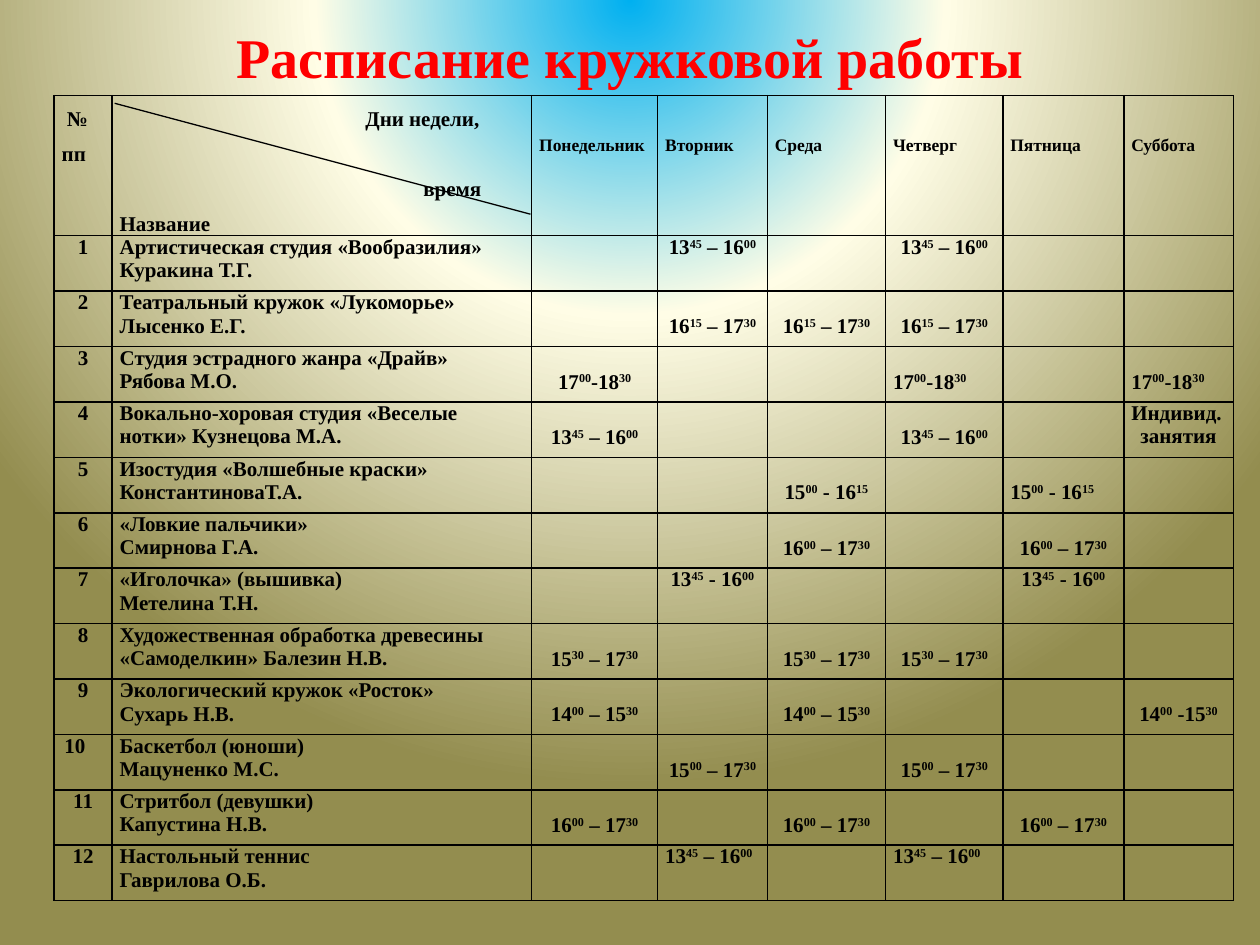
from lxml.etree import SubElement
from pptx import Presentation
from pptx.dml.color import RGBColor
from pptx.enum.shapes import MSO_CONNECTOR
from pptx.enum.text import MSO_ANCHOR, MSO_AUTO_SIZE, PP_ALIGN
from pptx.oxml import parse_xml
from pptx.oxml.ns import nsdecls, qn
from pptx.util import Inches, Pt

FONT = "Times New Roman"
BLACK = RGBColor(0, 0, 0)
RED = RGBColor(255, 0, 0)
SKY = RGBColor(0x00, 0xB0, 0xF0)
CREAM = RGBColor(0xFF, 0xFD, 0xE6)
OLIVE = RGBColor(0x93, 0x8D, 0x4F)
STOPS = [(0, SKY), (40, CREAM), (100, OLIVE)]
LEFT, MID = PP_ALIGN.LEFT, PP_ALIGN.CENTER

TITLE = "Расписание кружковой работы"
DAYS = ["Понедельник", "Вторник", "Среда", "Четверг", "Пятница", "Суббота"]
MON, TUE, WED, THU, FRI, SAT = range(2, 8)
# club, teacher, then time for each day; ^ raises the two digits after it
CLUBS = [
    ("Артистическая студия «Вообразилия»", "Куракина Т.Г.",
     {TUE: "13^45 – 16^00", THU: "13^45 – 16^00"}),
    ("Театральный кружок «Лукоморье»", "Лысенко Е.Г.",
     {TUE: "16^15 – 17^30", WED: "16^15 – 17^30", THU: "16^15 – 17^30"}),
    ("Студия эстрадного жанра «Драйв»", "Рябова М.О.",
     {MON: "17^00-18^30", THU: "17^00-18^30", SAT: "17^00-18^30"}),
    ("Вокально-хоровая студия «Веселые", "нотки» Кузнецова М.А.",
     {MON: "13^45 – 16^00", THU: "13^45 – 16^00", SAT: "Индивид.\nзанятия"}),
    ("Изостудия «Волшебные краски»", "КонстантиноваТ.А.",
     {WED: "15^00 - 16^15", FRI: "15^00 - 16^15"}),
    ("«Ловкие пальчики»", "Смирнова Г.А.",
     {WED: "16^00 – 17^30", FRI: "16^00 – 17^30"}),
    ("«Иголочка» (вышивка)", "Метелина Т.Н.",
     {TUE: "13^45 - 16^00", FRI: "13^45 - 16^00"}),
    ("Художественная обработка древесины", "«Самоделкин» Балезин Н.В.",
     {MON: "15^30 – 17^30", WED: "15^30 – 17^30", THU: "15^30 – 17^30"}),
    ("Экологический кружок «Росток»", "Сухарь Н.В.",
     {MON: "14^00 – 15^30", WED: "14^00 – 15^30", SAT: "14^00 -15^30"}),
    ("Баскетбол (юноши)", "Мацуненко М.С.",
     {TUE: "15^00 – 17^30", THU: "15^00 – 17^30"}),
    ("Стритбол (девушки)", "Капустина Н.В.",
     {MON: "16^00 – 17^30", WED: "16^00 – 17^30", FRI: "16^00 – 17^30"}),
    ("Настольный теннис", "Гаврилова О.Б.",
     {TUE: "13^45 – 16^00", THU: "13^45 – 16^00"}),
]
TOP_ROWS = {1, 7, 12}    # times stand on the first line
LEFT_CELLS = {(3, THU), (3, SAT), (5, FRI), (12, TUE), (12, THU)}

COLS = [0.46, 3.33, 1, 0.87, 0.94, 0.93, 0.96, 0.87]
HEAD, ROW, PAD, DROP = 0.96, 0.44, 0.06, 0.19
X, Y = 0.43, 0.76


def paint(slide):
    """Fill the background with a radial gradient centred above the slide."""
    stops = "".join(f'<a:gs pos="{pos * 1000}"><a:srgbClr val="{tone}"/></a:gs>'
                    for pos, tone in STOPS)
    slide.element.cSld.insert(0, parse_xml(
        f'<p:bg {nsdecls("p", "a")}><p:bgPr><a:gradFill rotWithShape="1">'
        f'<a:gsLst>{stops}</a:gsLst><a:path path="circle"><a:fillToRect '
        'l="50000" t="-80000" r="50000" b="180000"/></a:path></a:gradFill>'
        '<a:effectLst/></p:bgPr></p:bg>'))


def frame(cell):
    """Clear the cell's fill, set its margins and draw its four borders."""
    cell.fill.background()
    cell.margin_left = cell.margin_right = Inches(PAD)
    cell.margin_top = cell.margin_bottom = 0
    props = cell._tc.get_or_add_tcPr()
    for i, side in enumerate("LRTB"):
        props.insert(i, parse_xml(
            f'<a:ln{side} {nsdecls("a")} w="12700"><a:solidFill>'
            f'<a:srgbClr val="{BLACK}"/></a:solidFill></a:ln{side}>'))


def write(cell, text, align=LEFT, size=12, space=1.0):
    """Put one paragraph on each line of text, raising digits after ^."""
    paras = []
    for i, line in enumerate(text.split("\n")):
        para = cell.text_frame.paragraphs[0] if i == 0 else cell.text_frame.add_paragraph()
        para.alignment, para.line_spacing = align, space
        font = para.font
        font.name, font.size, font.bold = FONT, Pt(size), True
        font.color.rgb = BLACK
        first, *rest = line.split("^")
        para.add_run().text = first
        for part in rest:
            high = para.add_run()
            high.text = part[:2]
            high.font._element.set("baseline", "30000")
            if part[2:]:
                para.add_run().text = part[2:]
        paras.append(para)
    return paras


def indent(para, left, first=0):
    props = para._p.get_or_add_pPr()
    props.set("marL", str(Inches(left)))
    props.set("indent", str(Inches(first)))


def fill_head(table):
    number = write(table.cell(0, 0), "№ пп", space=1.5)[0]
    indent(number, 0, 0.04)
    days, time, _ = write(table.cell(0, 1), "Дни недели,\nвремя\nНазвание", space=1.5)
    indent(days, 1.95)
    indent(time, 2.41)
    time.space_before = Pt(20)
    for col, day in enumerate(DAYS, MON):
        cell = table.cell(0, col)
        cell.margin_top = Inches(0.24)
        write(cell, day, size=10, space=1.5)


def fill_rows(table):
    for row, (club, lead, times) in enumerate(CLUBS, 1):
        write(table.cell(row, 0), str(row), MID)
        write(table.cell(row, 1), f"{club}\n{lead}")
        for col, text in times.items():
            cell = table.cell(row, col)
            if row not in TOP_ROWS and "\n" not in text:
                cell.margin_top = Inches(DROP)
            paras = write(cell, text, LEFT if (row, col) in LEFT_CELLS else MID)
            if len(paras) > 1:
                paras[0].alignment = LEFT
    table.cell(10, 0).margin_right = Inches(0.19)


def main():
    deck = Presentation()
    deck.slide_width, deck.slide_height = Inches(10), Inches(7.5)
    slide = deck.slides.add_slide(deck.slide_layouts[5])
    paint(slide)

    title = slide.shapes.title
    title.left, title.top = Inches(0.5), Inches(0.21)
    title.width, title.height = Inches(9), Inches(0.47)
    box = title.text_frame
    box.text = TITLE
    box.auto_size = MSO_AUTO_SIZE.NONE
    box.vertical_anchor = MSO_ANCHOR.MIDDLE
    para = box.paragraphs[0]
    para.alignment = MID
    para.font.name, para.font.size, para.font.bold = FONT, Pt(32), True
    para.font.color.rgb = RED

    high = HEAD + ROW * len(CLUBS)
    table = slide.shapes.add_table(len(CLUBS) + 1, len(COLS), Inches(X), Inches(Y),
                                   Inches(sum(COLS)), Inches(high)).table
    table.first_row = table.horz_banding = False
    for col, width in zip(table.columns, COLS):
        col.width = Inches(width)
    for i, row in enumerate(table.rows):
        row.height = Inches(ROW if i else HEAD)
    for cell in table.iter_cells():
        frame(cell)
    fill_head(table)
    fill_rows(table)

    line = slide.shapes.add_connector(MSO_CONNECTOR.STRAIGHT, Inches(0.91), Inches(0.82),
                                      Inches(4.21), Inches(1.7))
    line.line.color.rgb = BLACK
    line.line.width = Pt(0.75)
    SubElement(line._element.spPr, qn("a:effectLst"))
    deck.save("out.pptx")


if __name__ == "__main__":
    main()
